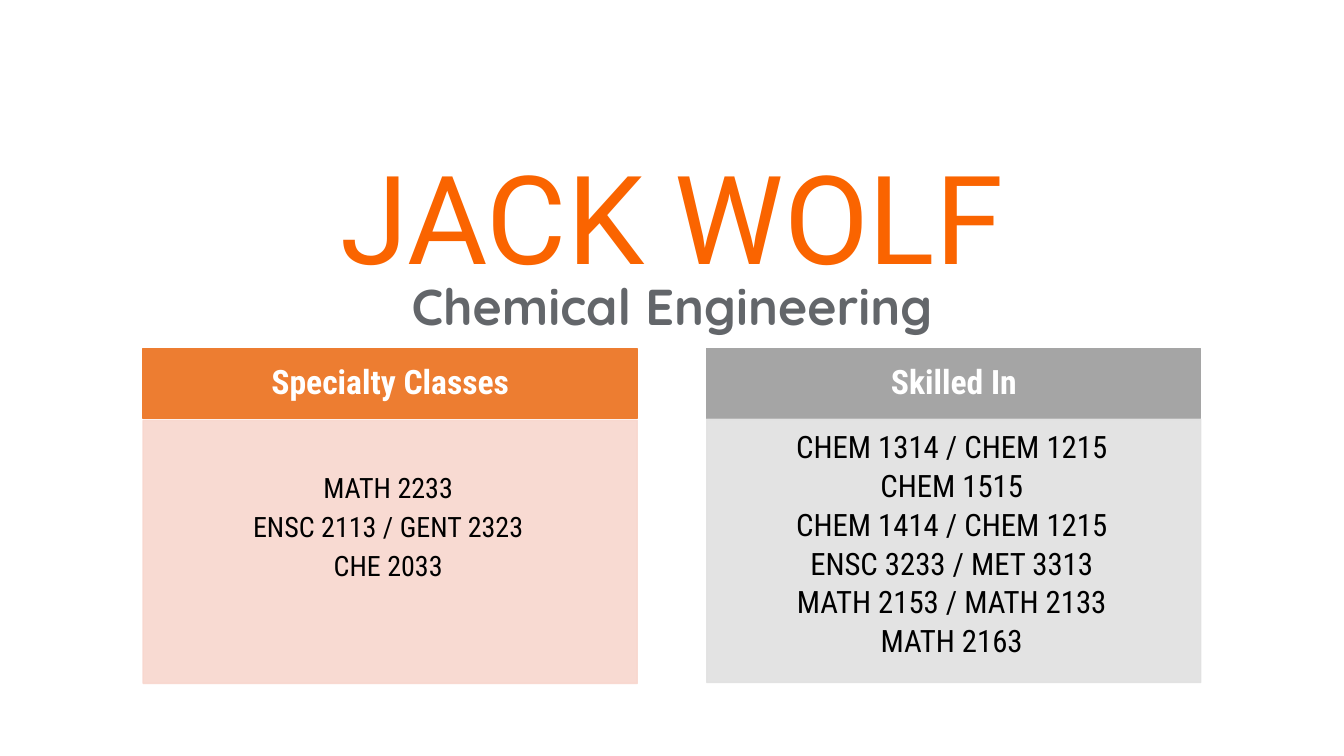
from lxml.etree import SubElement
from pptx import Presentation
from pptx.dml.color import RGBColor
from pptx.enum.text import MSO_ANCHOR as Anchor, MSO_AUTO_SIZE as AutoSize, PP_ALIGN as Align
from pptx.oxml.ns import qn
from pptx.util import Inches, Pt

NAME = "JACK WOLF"
MAJOR = "Chemical Engineering"
COLUMNS = [
    {
        "heading": "Specialty Classes", "accent": "ED7D31", "tint": "F8D7CE",
        "classes": ["MATH 2233", "ENSC 2113 / GENT 2323", "CHE 2033"],
        "size": 20, "leading": 1.0, "after": 3.6,
        "top": 4.17, "insets": (0.12, 0.5, 0.16, 0.17),
    },
    {
        "heading": "Skilled In", "accent": "A5A5A5", "tint": "E1E1E1",
        "classes": ["CHEM 1314 / CHEM 1215", "CHEM 1515", "CHEM 1414 / CHEM 1215",
                    "ENSC 3233 / MET 3313", "MATH 2153 / MATH 2133", "MATH 2163"],
        "size": 22, "leading": 0.9, "after": 3.9,
        "top": 4.16, "insets": (0.13, 0.13, 0.17, 0.19),
    },
]
COLUMN_LEFT, COLUMN_PITCH, COLUMN_WIDTH = 1.42, 5.59, 4.9
HEADING_TOP, HEADING_HEIGHT, LIST_HEIGHT = 3.46, 0.69, 2.61


def color(value):
    return RGBColor.from_string(value)


def place(box, left, top, width, height):
    box.left, box.top = Inches(left), Inches(top)
    box.width, box.height = Inches(width), Inches(height)


def write(box, lines, font, size, ink, bold=False, leading=1.0, after=0,
          anchor=Anchor.TOP, insets=(0.1, 0.05, 0.1, 0.05)):
    frame = box.text_frame
    frame.text = "\n".join(lines)
    frame.word_wrap = True
    frame.auto_size = AutoSize.NONE
    frame.vertical_anchor = anchor
    (frame.margin_left, frame.margin_top,
     frame.margin_right, frame.margin_bottom) = map(Inches, insets)
    for line in frame.paragraphs:
        line.alignment = Align.CENTER
        line.line_spacing = leading
        line.space_before, line.space_after = Pt(0), Pt(after)
        line.font.name, line.font.size, line.font.bold = font, Pt(size), bold
        line.font.color.rgb = color(ink)
        properties = line._p.get_or_add_pPr()
        properties.set("marL", "0")
        properties.set("indent", "0")
        properties.insert_element_before(
            properties.makeelement(qn("a:buNone")), "a:tabLst", "a:defRPr", "a:extLst")


def paint(box, value, opacity=100):
    box.fill.solid()
    box.fill.fore_color.rgb = color(value)
    box.line.color.rgb = color(value)
    box.line.width = Pt(1)
    if opacity < 100:
        for tone in box._element.spPr.iter(qn("a:srgbClr")):
            SubElement(tone, qn("a:alpha")).set("val", str(opacity * 1000))


deck = Presentation()
deck.slide_width, deck.slide_height = Inches(13.33), Inches(7.5)
slide = deck.slides.add_slide(deck.slide_layouts.get_by_name("Comparison"))
title, *bodies = slide.placeholders

place(title, 0.63, 1.35, 12.07, 1.58)
write(title, [NAME], "Roboto", 88, "FA6400")

major = slide.shapes.add_textbox(Inches(0.63), Inches(2.68), Inches(12.07), Inches(0.71))
write(major, [MAJOR], "Quicksand", 36, "63666A", bold=True)

for index, column in enumerate(COLUMNS):
    heading, classes = bodies[2 * index:2 * index + 2]
    left = COLUMN_LEFT + index * COLUMN_PITCH

    place(heading, left, HEADING_TOP, COLUMN_WIDTH, HEADING_HEIGHT)
    paint(heading, column["accent"])
    write(heading, [column["heading"]], "Roboto Condensed", 24, "FFFFFF", bold=True,
          leading=0.9, anchor=Anchor.MIDDLE, insets=(0.19, 0.11, 0.19, 0.11))

    place(classes, left, column["top"], COLUMN_WIDTH, LIST_HEIGHT)
    paint(classes, column["tint"], opacity=90)
    write(classes, column["classes"], "Roboto Condensed", column["size"], "000000",
          leading=column["leading"], after=column["after"], insets=column["insets"])

deck.save("out.pptx")
